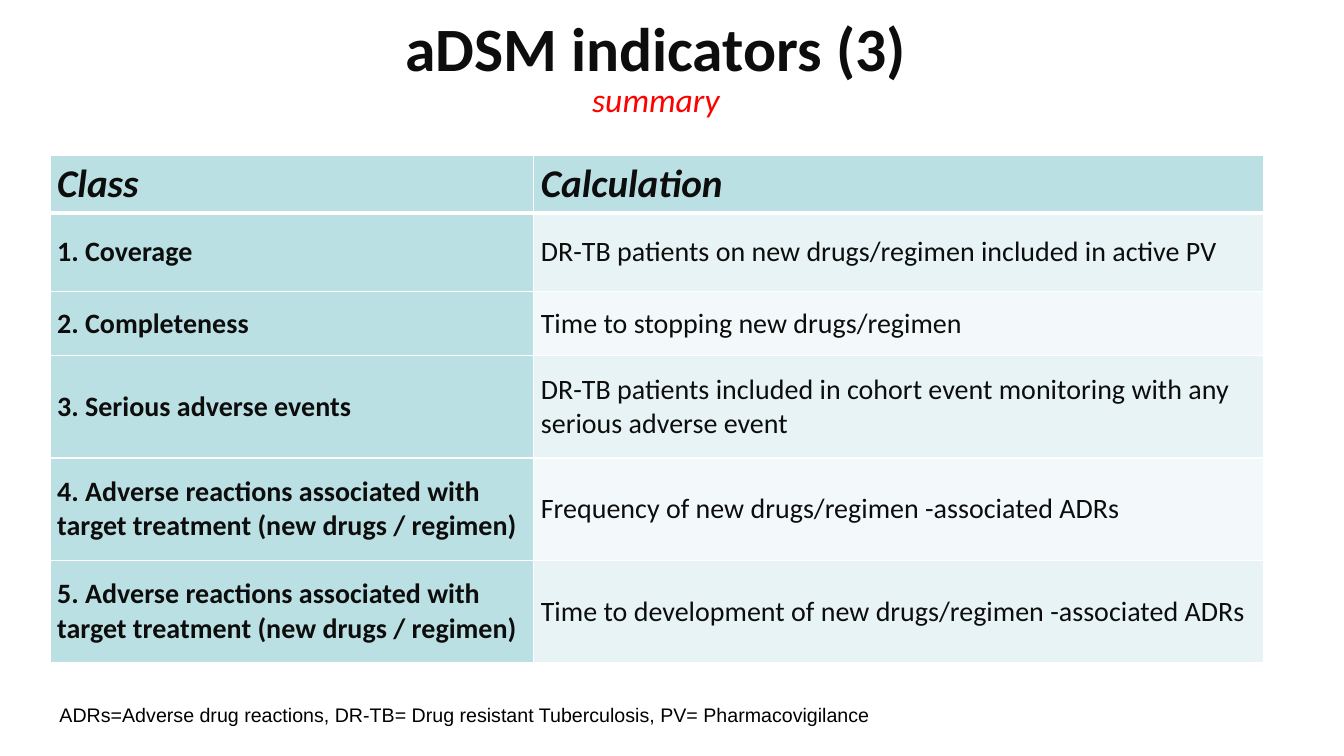
from typing import NamedTuple

import pptx
import pptx.dml.color
import pptx.enum.text
import pptx.oxml
import pptx.oxml.ns
import pptx.util

Cm = pptx.util.Cm
Pt = pptx.util.Pt
RGBColor = pptx.dml.color.RGBColor
Anchor = pptx.enum.text.MSO_ANCHOR
Align = pptx.enum.text.PP_ALIGN

INK = RGBColor(0x0D, 0x0D, 0x0D)
BLACK = RGBColor(0, 0, 0)
RED = RGBColor(0xFF, 0, 0)
WHITE = RGBColor(0xFF, 0xFF, 0xFF)
TEAL = RGBColor(0xBB, 0xE0, 0xE3)
BANDS = (RGBColor(0xE7, 0xF3, 0xF4), RGBColor(0xF3, 0xF9, 0xFA))


class Indicator(NamedTuple):
    name: str
    calculation: str
    height: float


HEADER = Indicator("Class", "Calculation", 1.45)
TREATMENT = "Adverse reactions associated with target treatment (new drugs / regimen)"
INDICATORS = [
    Indicator("Coverage", "DR-TB patients on new drugs/regimen included in active PV", 1.98),
    Indicator("Completeness", "Time to stopping new drugs/regimen", 1.61),
    Indicator("Serious adverse events",
              "DR-TB patients included in cohort event monitoring with any "
              "serious adverse event", 2.58),
    Indicator(TREATMENT, "Frequency of new drugs/regimen -associated ADRs", 2.58),
    Indicator(TREATMENT, "Time to development of new drugs/regimen -associated ADRs", 2.58),
]


def add_text(p, text: str, *, size: float = 20, font: str = "Calibri",
             color: RGBColor = INK, bold: bool = False, italic: bool = False) -> None:
    r = p.add_run()
    r.text = text
    r.font.size = Pt(size)
    r.font.name = font
    r.font.color.rgb = color
    r.font.bold = bold
    r.font.italic = italic


def add_borders(cell, bottom: float) -> None:
    tc_pr = cell._tc.get_or_add_tcPr()
    widths = {"lnL": 1, "lnR": 1, "lnT": 1, "lnB": bottom}
    for i, (side, width) in enumerate(widths.items()):
        tc_pr.insert(i, pptx.oxml.parse_xml(
            f'<a:{side} {pptx.oxml.ns.nsdecls("a")} w="{Pt(width)}">'
            f'<a:solidFill><a:srgbClr val="{WHITE}"/></a:solidFill></a:{side}>'))


def fill_cell(cell, text: str, fill: RGBColor, bottom: float = 1, **fmt) -> None:
    cell.fill.solid()
    cell.fill.fore_color.rgb = fill
    cell.vertical_anchor = Anchor.MIDDLE
    cell.margin_left = cell.margin_right = Cm(0.18)
    cell.margin_top = cell.margin_bottom = 0
    add_text(cell.text_frame.paragraphs[0], text, **fmt)
    add_borders(cell, bottom)


def add_title(s) -> None:
    sp = s.shapes.title
    sp.left, sp.top, sp.width, sp.height = Cm(5.33), Cm(0.13), Cm(22.4), Cm(3)
    tf = sp.text_frame
    tf.word_wrap = True
    tf.auto_size = pptx.enum.text.MSO_AUTO_SIZE.NONE
    tf.vertical_anchor = Anchor.MIDDLE
    p = tf.paragraphs[0]
    p.alignment = Align.CENTER
    add_text(p, "aDSM indicators (3)", size=44, bold=True)
    p = tf.add_paragraph()
    p.alignment = Align.CENTER
    p.line_spacing = 0.9
    add_text(p, "summary", size=24, color=RED, italic=True)


def add_indicator_table(s) -> None:
    rows = [HEADER, *INDICATORS]
    widths = (12.19, 18.4)
    table = s.shapes.add_table(len(rows), 2, Cm(1.26), Cm(3.92), Cm(sum(widths)),
                               Cm(sum(row.height for row in rows))).table
    for column, width in zip(table.columns, widths):
        column.width = Cm(width)
    for i, row in enumerate(rows):
        table.rows[i].height = Cm(row.height)
        name, calculation = table.cell(i, 0), table.cell(i, 1)
        if i == 0:
            for cell, text in ((name, row.name), (calculation, row.calculation)):
                fill_cell(cell, text, TEAL, bottom=3, size=28, bold=True, italic=True)
        else:
            fill_cell(name, f"{i}. {row.name}", TEAL, bold=True)
            fill_cell(calculation, row.calculation, BANDS[(i - 1) % 2])


def add_abbreviations(s) -> None:
    sp = s.shapes.add_textbox(Cm(1.14), Cm(17.6), Cm(25.5), Cm(0.86))
    tf = sp.text_frame
    tf.word_wrap = True
    tf.margin_left = Cm(0.36)
    add_text(tf.paragraphs[0],
             "ADRs=Adverse drug reactions, DR-TB= Drug resistant Tuberculosis, "
             "PV= Pharmacovigilance", size=14, font="Arial", color=BLACK)


def main() -> None:
    prs = pptx.Presentation()
    prs.slide_width, prs.slide_height = Cm(33.87), Cm(19.05)
    s = prs.slides.add_slide(prs.slide_layouts[5])
    add_title(s)
    add_indicator_table(s)
    add_abbreviations(s)
    prs.save("out.pptx")


if __name__ == "__main__":
    main()
